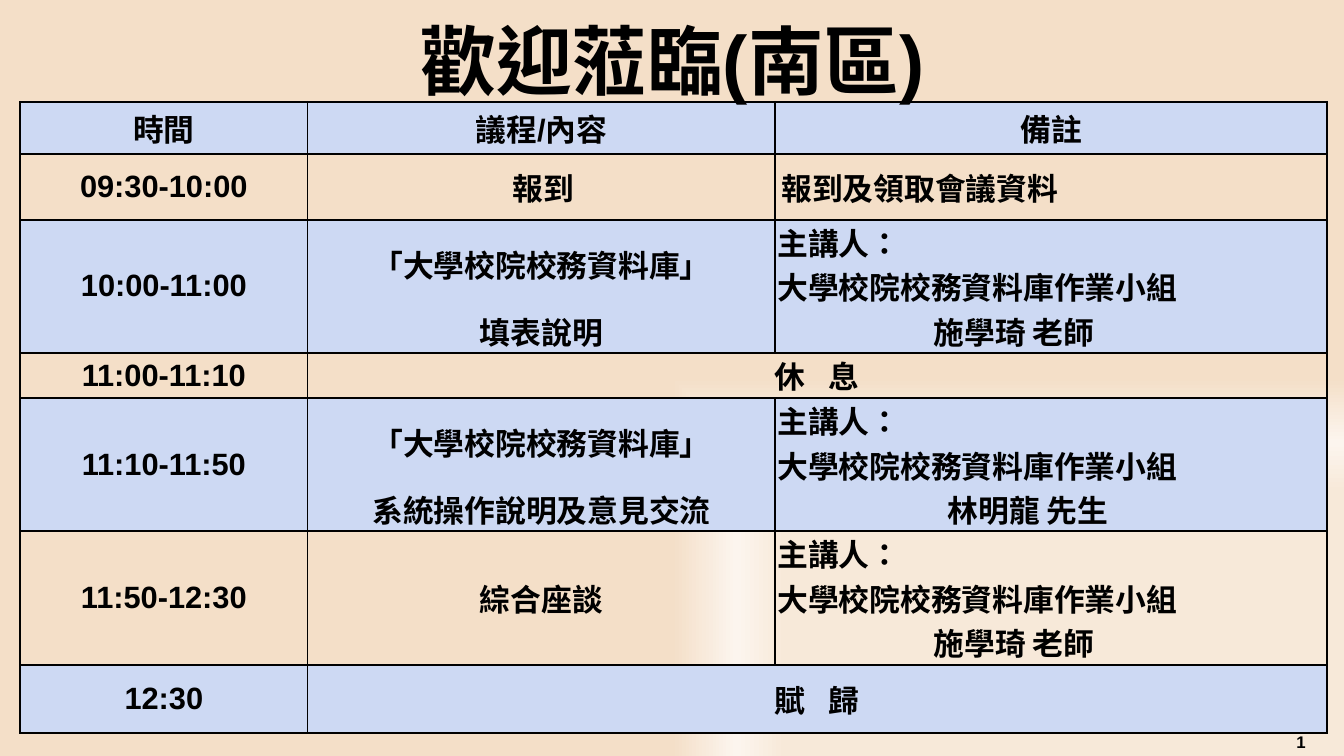
from pptx import Presentation
from pptx.dml.color import RGBColor
from pptx.enum.lang import MSO_LANGUAGE_ID as LANG
from pptx.enum.text import MSO_ANCHOR as ANCHOR, MSO_AUTO_SIZE as AUTO, PP_ALIGN as ALIGN
from pptx.oxml import parse_xml
from pptx.oxml.ns import nsdecls, qn
from pptx.util import Inches, Pt

BLACK = RGBColor(0x00, 0x00, 0x00)
BLUE = RGBColor(0xCD, 0xD9, 0xF3)
STOPS = [
    (0, RGBColor(0xF7, 0xE8, 0xD7)),
    (70, RGBColor(0xF7, 0xE9, 0xD9)),
    (83, RGBColor(0xFC, 0xF5, 0xEE)),
    (100, RGBColor(0xF4, 0xDF, 0xC8)),
]
COLS = [2.85, 4.64, 5.47]
ROWS = [0.52, 0.65, 1.32, 0.45, 1.32, 1.33, 0.67]
FONT = {"name": "Arial", "bold": True, "language_id": LANG.TRADITIONAL_CHINESE}
CELL = {
    "vertical_anchor": ANCHOR.MIDDLE,
    "margin_left": Inches(0.02),
    "margin_right": Inches(0.02),
    "margin_top": 0,
    "margin_bottom": 0,
}
HOST = ["主講人：", "大學校院校務資料庫作業小組"]
BASE = "「大學校院校務資料庫」"
AGENDA = [
    [["時間"], ["議程/內容"], ["備註"]],
    [["09:30-10:00"], ["報到"], ["報到及領取會議資料"]],
    [["10:00-11:00"], [BASE, "填表說明"], HOST + ["施學琦 老師"]],
    [["11:00-11:10"], ["休 息"]],
    [["11:10-11:50"], [BASE, "系統操作說明及意見交流"], HOST + ["林明龍 先生"]],
    [["11:50-12:30"], ["綜合座談"], HOST + ["施學琦 老師"]],
    [["12:30"], ["賦 歸"]],
]
INDENT = {"報到": 0.04, "報到及領取會議資料": 0.04, "施學琦 老師": 1.55, "林明龍 先生": 1.69}
SPREAD = {"休 息", "賦 歸"}


def apply(obj, vals):
    """Set each attribute of an object from a dict."""
    for key, val in vals.items():
        setattr(obj, key, val)


def style(font, size):
    """Give a font the slide's bold black look."""
    apply(font, FONT | {"size": Pt(size)})
    font.color.rgb = BLACK


def paint(slide):
    """Fill the background with a gradient from the lower right corner."""
    slide.background.fill.solid()
    stops = "".join(
        f'<a:gs pos="{pos * 1000}"><a:srgbClr val="{color}"/></a:gs>' for pos, color in STOPS
    )
    back = slide.element.find(".//" + qn("p:bgPr"))
    back.replace(back[0], parse_xml(
        f'<a:gradFill {nsdecls("a")} rotWithShape="1"><a:gsLst>{stops}</a:gsLst>'
        '<a:path path="rect"><a:fillToRect l="100000" t="100000"/></a:path></a:gradFill>'
    ))


def border(cell):
    """Draw a black line on all four sides of a cell."""
    props = cell._tc.get_or_add_tcPr()
    for side in "LRTB":
        props.append(parse_xml(
            f'<a:ln{side} {nsdecls("a")} w="{Pt(1.5)}"><a:solidFill>'
            f'<a:srgbClr val="{BLACK}"/></a:solidFill></a:ln{side}>'
        ))


def write(cell, lines, left):
    """Write the lines of one cell, flush left or centred."""
    frame = cell.text_frame
    frame.text = "\n".join(lines)
    for para in frame.paragraphs:
        para.alignment = ALIGN.LEFT if left else ALIGN.CENTER
        if len(lines) == 2:
            para.line_spacing = 1.5
        if para.text in INDENT:
            para._p.get_or_add_pPr().set("marL", str(Inches(INDENT[para.text])))
        run = para.runs[0]
        style(run.font, 22)
        if para.text in SPREAD:
            run._r.get_or_add_rPr().set("spc", "600")


def add_plan(slide):
    """Add the agenda table."""
    table = slide.shapes.add_table(
        len(ROWS), len(COLS), Inches(0.2), Inches(1.01), Inches(sum(COLS)), Inches(sum(ROWS))
    ).table
    apply(table, {"first_row": False, "horz_banding": False})
    for col, width in zip(table.columns, COLS):
        col.width = Inches(width)
    for num, (row, height) in enumerate(zip(table.rows, ROWS)):
        row.height = Inches(height)
        for cell in row.cells:
            apply(cell, CELL)
            border(cell)
            if num % 2 == 0:
                cell.fill.solid()
                cell.fill.fore_color.rgb = BLUE
            else:
                cell.fill.background()
        texts = AGENDA[num]
        if len(texts) == 2:
            table.cell(num, 1).merge(table.cell(num, 2))
        for pos, lines in enumerate(texts):
            write(table.cell(num, pos), lines, num > 0 and pos == 2)


def add_title(slide):
    """Place the title in front of the table."""
    title = slide.shapes.title
    apply(title, {"left": Inches(1.67), "top": Inches(0.03),
                  "width": Inches(10), "height": Inches(0.67)})
    frame = title.text_frame
    frame.text = "歡迎蒞臨(南區)"
    apply(frame, {"vertical_anchor": ANCHOR.MIDDLE, "auto_size": AUTO.NONE, "word_wrap": True})
    para = frame.paragraphs[0]
    apply(para, {"alignment": ALIGN.CENTER, "line_spacing": 1.5})
    style(para.runs[0].font, 54)
    slide.shapes.element.append(title.element)


def add_page(slide):
    """Add the page number at the lower right."""
    box = slide.shapes.add_textbox(Inches(12.48), Inches(7.22), Inches(0.85), Inches(0.28))
    frame = box.text_frame
    apply(frame, {"word_wrap": True, "vertical_anchor": ANCHOR.MIDDLE})
    para = frame.paragraphs[0]
    para.alignment = ALIGN.CENTER
    run = para.add_run()
    run.text = "1"
    style(run.font, 12)


def main():
    """Build and save the slide."""
    deck = Presentation()
    apply(deck, {"slide_width": Inches(13.33), "slide_height": Inches(7.5)})
    slide = deck.slides.add_slide(deck.slide_layouts[5])
    paint(slide)
    add_page(slide)
    add_plan(slide)
    add_title(slide)
    deck.save("out.pptx")


if __name__ == "__main__":
    main()
